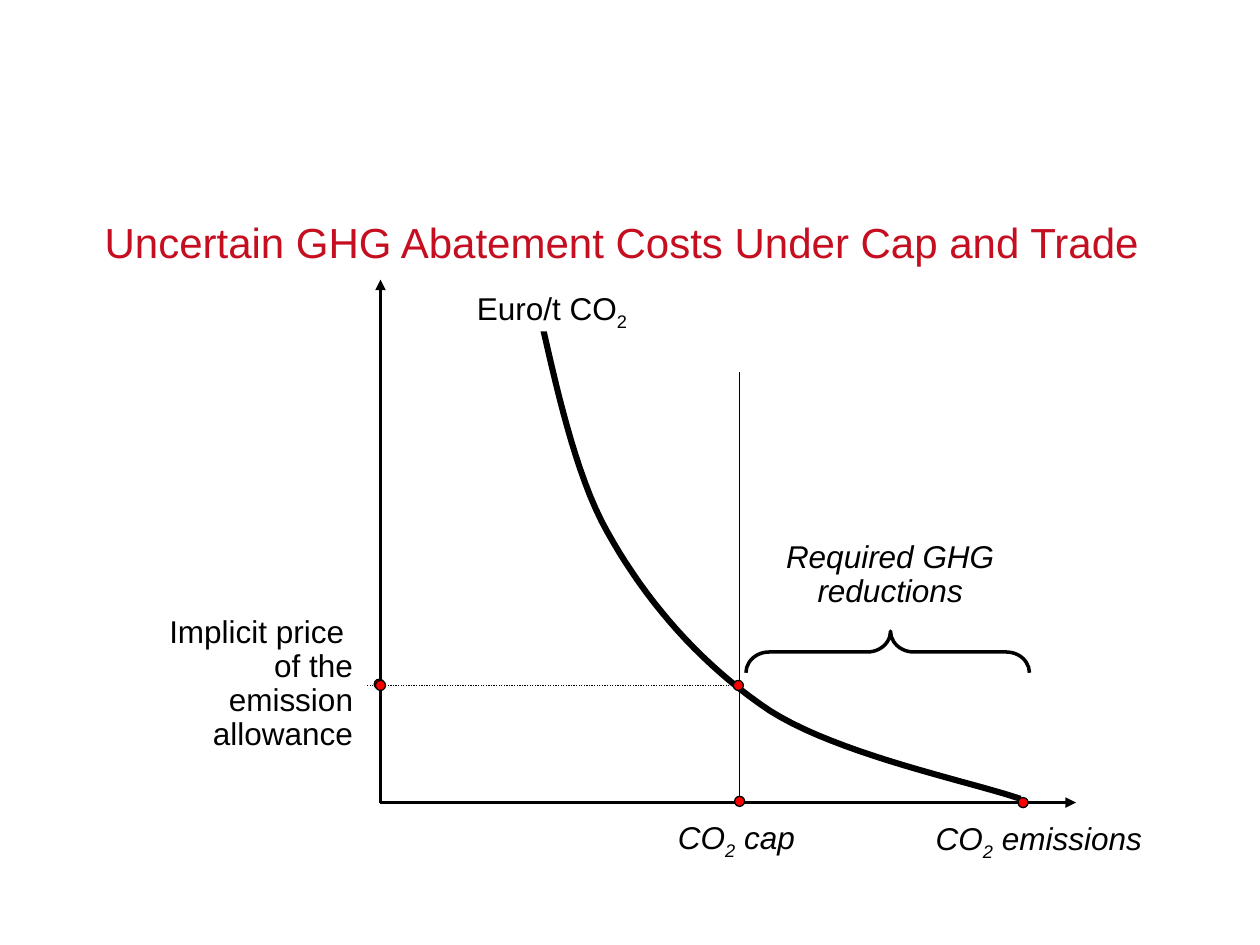
from pptx import Presentation
from pptx.dml.color import RGBColor
from pptx.enum.dml import MSO_LINE
from pptx.enum.shapes import MSO_CONNECTOR, MSO_SHAPE
from pptx.enum.text import MSO_ANCHOR, MSO_AUTO_SIZE, PP_ALIGN
from pptx.oxml.ns import qn
from pptx.util import Inches, Pt
from lxml.etree import SubElement

COLORS = {"title": "C50E1F", "ink": "000000", "paper": "FFFFFF", "dot": "FF0000"}
FONT = "Arial"
TITLE = "Uncertain GHG Abatement Costs Under Cap and Trade"

# Diagram coordinates in inches
AXIS_X, AXIS_Y = 3.02, 6.37
CAP_X, PRICE_Y = 5.87, 5.44
DOT = 0.08
CURVE_START = (4.23, 2.29)
CURVE = [  # two control points and an end point for each segment
    ((4.33, 2.61), (4.5, 3.66), (4.82, 4.22)),
    ((5.13, 4.78), (5.57, 5.28), (6.11, 5.64)),
    ((6.66, 5.99), (7.69, 6.2), (8.1, 6.34)),
]
STEPS = 20

# start, end, width in points, style
CAP_LINE = ((CAP_X, 2.95), (CAP_X, 6.38), 0.75, "plain")
AXES = [
    ((AXIS_X, AXIS_Y), (8.54, AXIS_Y), 2, "arrow"),
    ((AXIS_X, AXIS_Y), (AXIS_X, 2.22), 2, "arrow"),
]
PRICE_LINE = ((5.81, PRICE_Y), (2.91, PRICE_Y), 0.75, "dotted")
DOTS = [(8.12, AXIS_Y), (CAP_X, 6.36), (5.86, PRICE_Y), (3.01, 5.43), (AXIS_X, PRICE_Y)]

# box, runs as (text, is subscript), italic, alignment, line spacing, filled
LABELS = [
    ((3.17, 2.25, 2.42, 0.38), [("Euro/t CO", False), ("2", True)],
     False, PP_ALIGN.CENTER, 0.9, True),
    ((6.83, 6.42, 2.83, 0.48), [("CO", False), ("2", True), (" emissions", False)],
     True, PP_ALIGN.CENTER, 1.1, False),
    ((6.01, 4.25, 2.11, 0.64), [("Required GHG\nreductions", False)],
     True, PP_ALIGN.CENTER, 0.9, True),
    ((0.79, 4.84, 2.11, 1.19), [("Implicit price \nof the\nemission allowance", False)],
     False, PP_ALIGN.RIGHT, 0.9, True),
    ((4.88, 6.45, 1.93, 0.41), [("CO", False), ("2", True), (" cap", False)],
     True, PP_ALIGN.CENTER, 0.9, True),
]


def color(name):
    return RGBColor.from_string(COLORS[name])


def inches(values):
    return [Inches(value) for value in values]


def set_line(shape, width):
    shape.line.color.rgb = color("ink")
    shape.line.width = Pt(width)


def set_font(span, size, name, italic=False):
    span.font.name = FONT
    span.font.size = Pt(size)
    span.font.italic = italic
    span.font.color.rgb = color(name)


def add_title(page):
    title = page.shapes.title
    title.left, title.top, title.width, title.height = inches((0.83, 1.73, 8.34, 0.39))
    frame = title.text_frame
    frame.margin_left = frame.margin_right = frame.margin_top = frame.margin_bottom = 0
    frame.vertical_anchor = MSO_ANCHOR.BOTTOM
    frame.auto_size = MSO_AUTO_SIZE.NONE
    para = frame.paragraphs[0]
    para.alignment = PP_ALIGN.LEFT
    para.line_spacing = Pt(30)
    span = para.add_run()
    span.text = TITLE
    set_font(span, 24, "title")


def bezier(points, t):
    weights = ((1 - t) ** 3, 3 * t * (1 - t) ** 2, 3 * t * t * (1 - t), t ** 3)
    return tuple(sum(w * p[axis] for w, p in zip(weights, points)) for axis in (0, 1))


def add_curve(page):
    points, start = [], CURVE_START
    for segment in CURVE:
        points += [bezier((start, *segment), i / STEPS) for i in range(1, STEPS + 1)]
        start = segment[-1]
    builder = page.shapes.build_freeform(*inches(CURVE_START))
    builder.add_line_segments([inches(point) for point in points], close=False)
    curve = builder.convert_to_shape()
    curve.shadow.inherit = False
    curve.fill.background()
    set_line(curve, 3.5)


def add_line(page, start, end, width, style):
    line = page.shapes.add_connector(MSO_CONNECTOR.STRAIGHT, *inches(start + end))
    set_line(line, width)
    properties = line._element.spPr
    if style == "dotted":
        line.line.dash_style = MSO_LINE.ROUND_DOT
    if style == "arrow":
        SubElement(properties.find(qn("a:ln")), qn("a:tailEnd"), type="triangle")
    SubElement(properties, qn("a:effectLst"))


def add_dot(page, x, y):
    box = inches((x - DOT / 2, y - DOT / 2, DOT, DOT))
    dot = page.shapes.add_shape(MSO_SHAPE.OVAL, *box)
    dot.shadow.inherit = False
    dot.fill.solid()
    dot.fill.fore_color.rgb = color("dot")
    set_line(dot, 0.75)


def add_brace(page):
    brace = page.shapes.add_shape(MSO_SHAPE.LEFT_BRACE, *inches((6.88, 4.05, 0.33, 2.25)))
    brace.rotation = 90
    brace.adjustments[0], brace.adjustments[1] = 0.56, 0.49
    brace.shadow.inherit = False
    brace.fill.background()
    set_line(brace, 2)


def add_label(page, place, runs, italic, alignment, spacing, filled):
    box = page.shapes.add_textbox(*inches(place))
    if filled:
        box.fill.solid()
        box.fill.fore_color.rgb = color("paper")
    box.text_frame.word_wrap = True
    para = box.text_frame.paragraphs[0]
    para.alignment = alignment
    para.line_spacing = spacing
    for text, subscript in runs:
        for index, piece in enumerate(text.split("\n")):
            if index:
                para.add_line_break()
            span = para.add_run()
            span.text = piece
            set_font(span, 18, "ink", italic)
            if subscript:
                span.font._element.set("baseline", "-25000")


def main():
    deck = Presentation()
    deck.slide_width, deck.slide_height = inches((10, 7.5))
    page = deck.slides.add_slide(deck.slide_layouts[5])
    add_curve(page)
    add_line(page, *CAP_LINE)
    add_title(page)
    for axis in AXES:
        add_line(page, *axis)
    for label in LABELS:
        add_label(page, *label)
    add_brace(page)
    add_line(page, *PRICE_LINE)
    for dot in DOTS:
        add_dot(page, *dot)
    deck.save("out.pptx")


if __name__ == "__main__":
    main()
